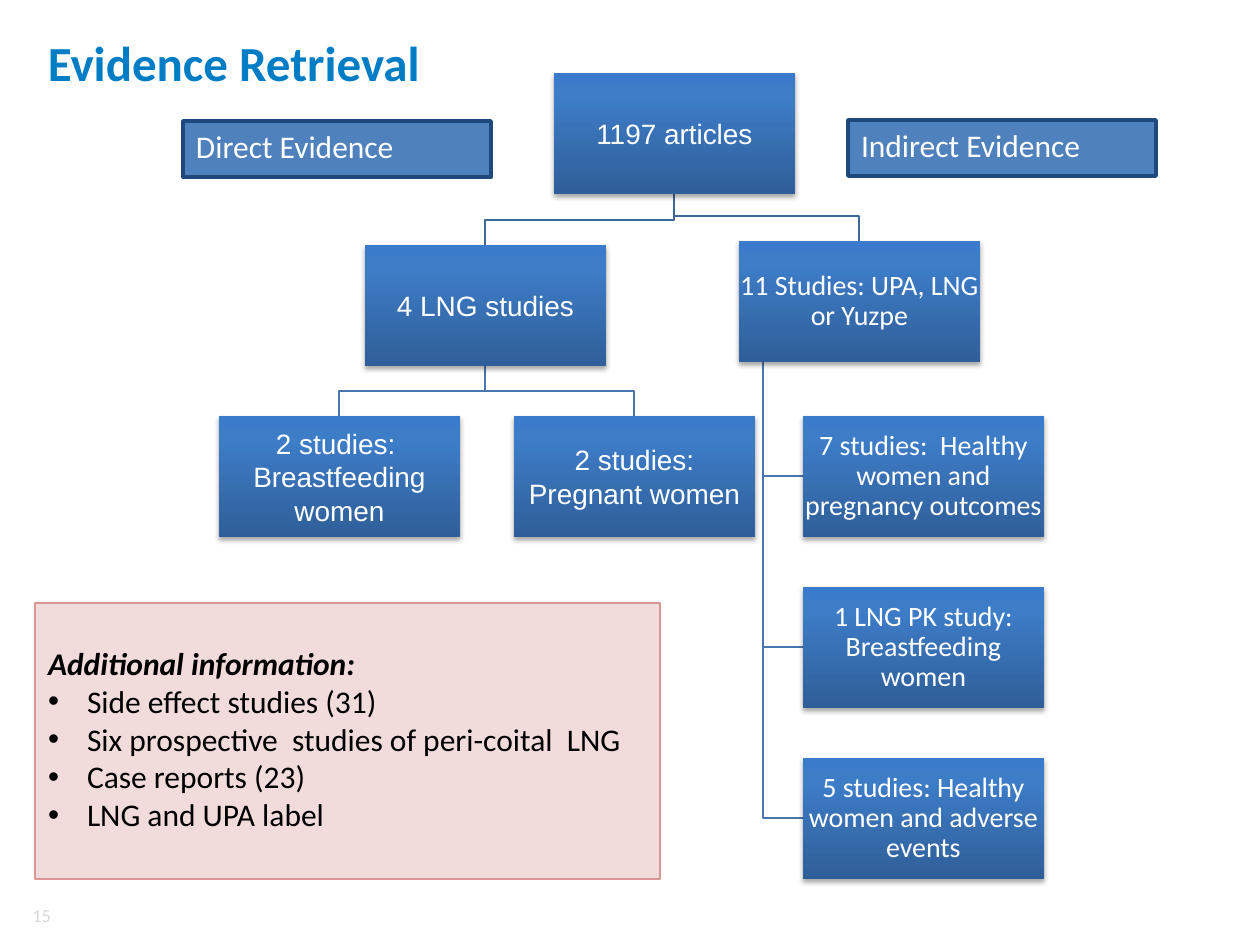
"""Build the Evidence Retrieval slide: a study tree with labels and a notes panel."""
from lxml import etree
from pptx import Presentation
from pptx.dml.color import RGBColor
from pptx.enum.shapes import MSO_SHAPE
from pptx.enum.text import MSO_ANCHOR, PP_ALIGN
from pptx.oxml.ns import qn
from pptx.util import Pt

RECT = MSO_SHAPE.RECTANGLE
TOP, MIDDLE = MSO_ANCHOR.TOP, MSO_ANCHOR.MIDDLE
LEFT, CENTER, RIGHT = PP_ALIGN.LEFT, PP_ALIGN.CENTER, PP_ALIGN.RIGHT

PX = 914400 / 126
BOX_W, BOX_H = 241, 121
ROW_TOP, ROW_GAP = 74, 171
INSET = 13, 6, 13, 6
TIGHT = 1, 1, 1, 1
INDENT = 39

WHITE = RGBColor(0xFF, 0xFF, 0xFF)
BLACK = RGBColor(0, 0, 0)
GREY = RGBColor(0xD9, 0xD9, 0xD9)
TITLE = RGBColor(0x00, 0x7D, 0xC5)
BLUE = RGBColor(0x4F, 0x81, 0xBD)
NAVY = RGBColor(0x1F, 0x49, 0x7D)
PINK = RGBColor(0xF2, 0xDC, 0xDB)
ROSE = RGBColor(0xD9, 0x96, 0x94)
DARK_LINK = RGBColor(0x3F, 0x67, 0x97)
LINK = RGBColor(0x48, 0x75, 0xAC)
SHADE = RGBColor(0x2F, 0x5F, 0x99), RGBColor(0x3D, 0x7C, 0xC7), RGBColor(0x3A, 0x7C, 0xCB)
STOPS = tuple(zip((0, 80, 100), SHADE))


def row(n):
    return ROW_TOP + n * ROW_GAP


NODES = {
    "all": ("1197 articles", 554, row(0) - 1, "Arial"),
    "direct": ("4 LNG studies", 365, row(1), "Arial"),
    "feeding": ("2 studies:  Breastfeeding women", 219, row(2), "Arial"),
    "pregnant": ("2 studies: Pregnant women", 514, row(2), "Arial"),
    "indirect": ("11 Studies: UPA, LNG or Yuzpe", 739, row(1) - 4, "Calibri"),
    "outcomes": ("7 studies:  Healthy women and pregnancy outcomes", 803, row(2), "Calibri"),
    "kinetic": ("1 LNG PK study: Breastfeeding women", 803, row(3), "Calibri"),
    "adverse": ("5 studies: Healthy women and adverse events", 803, row(4), "Calibri"),
}
FORKS = [
    ("all", ("indirect", "direct"), DARK_LINK),
    ("direct", ("pregnant", "feeding"), LINK),
]
HANGS = "indirect", ("adverse", "kinetic", "outcomes")
LABELS = [("Direct Evidence", 183, 121), ("Indirect Evidence", 848, 120)]
HEADING = "Additional information:"
NOTES = [
    "Side effect studies (31)",
    "Six prospective  studies of peri-coital  LNG",
    "Case reports (23)",
    "LNG and UPA label",
]


def emu(*px):
    return [round(n * PX) for n in px]


def frame(shape, inset=INSET, anchor=TOP):
    text = shape.text_frame
    text.word_wrap = True
    text.vertical_anchor = anchor
    (text.margin_left, text.margin_top,
     text.margin_right, text.margin_bottom) = emu(*inset)
    return text


def style(para, words, size, color, name="Calibri", align=LEFT, bold=False, italic=False):
    para.text = words
    para.alignment = align
    font = para.font
    font.size, font.name, font.color.rgb = Pt(size), name, color
    font.bold, font.italic = bold, italic


def panel(slide, place, fill, line, width):
    shape = slide.shapes.add_shape(RECT, *emu(*place))
    shape.shadow.inherit = False
    shape.fill.solid()
    shape.fill.fore_color.rgb = fill
    shape.line.color.rgb = line
    shape.line.width = Pt(width)
    return shape


def link(slide, points, color):
    pen = slide.shapes.build_freeform(*points[0], scale=PX)
    pen.add_line_segments(points[1:], close=False)
    shape = pen.convert_to_shape()
    shape.shadow.inherit = False
    shape.fill.background()
    shape.line.color.rgb = color
    shape.line.width = Pt(0.75)


def shade(shape):
    shape.fill.gradient()
    grad = shape._element.spPr.find(qn("a:gradFill"))
    stops = grad.find(qn("a:gsLst"))
    for stop in list(stops):
        stops.remove(stop)
    for pos, color in STOPS:
        stop = etree.SubElement(stops, qn("a:gs"), pos=str(pos * 1000))
        etree.SubElement(stop, qn("a:srgbClr"), val=str(color))
    grad.find(qn("a:lin")).set("ang", "16200000")


def drop(shape):
    shape.shadow.inherit = False
    effect = shape._element.spPr.find(qn("a:effectLst"))
    outer = etree.SubElement(effect, qn("a:outerShdw"), blurRad=str(Pt(3.1)),
                             dist=str(Pt(1.8)), dir="5400000", rotWithShape="0")
    color = etree.SubElement(outer, qn("a:srgbClr"), val="000000")
    etree.SubElement(color, qn("a:alpha"), val="35000")


def node(slide, words, x, y, name):
    shape = slide.shapes.add_shape(RECT, *emu(x, y, BOX_W, BOX_H))
    shade(shape)
    shape.line.fill.background()
    drop(shape)
    para = frame(shape, TIGHT, MIDDLE).paragraphs[0]
    style(para, words, 16, WHITE, name, CENTER)
    if name == "Calibri":
        para.line_spacing = 0.9


def tree(slide):
    boss, kids = HANGS
    _, x, y, _ = NODES[boss]
    trunk = x + BOX_W // 10
    for kid in kids:
        _, left, top, _ = NODES[kid]
        mid = top + BOX_H // 2
        link(slide, [(trunk, y + BOX_H), (trunk, mid), (left, mid)], LINK)
    for boss, kids, color in FORKS:
        _, x, y, _ = NODES[boss]
        start, foot = x + BOX_W // 2, y + BOX_H
        for kid in kids:
            _, left, top, _ = NODES[kid]
            end, bend = left + BOX_W // 2, top - 25
            link(slide, [(start, foot), (start, bend), (end, bend), (end, top)], color)
    for item in NODES.values():
        node(slide, *item)


def notes(slide):
    shape = panel(slide, (35, 603, 625, 276), PINK, ROSE, 0.75)
    text = frame(shape, (13, 41, 13, 6))
    style(text.paragraphs[0], HEADING, 18, BLACK, bold=True, italic=True)
    for words in NOTES:
        para = text.add_paragraph()
        props = para._p.get_or_add_pPr()
        step = round(INDENT * PX)
        props.set("marL", str(step))
        props.set("indent", str(-step))
        etree.SubElement(props, qn("a:buFont"), typeface="Arial")
        etree.SubElement(props, qn("a:buChar"), char="•")
        style(para, words, 18, BLACK)


def main():
    deck = Presentation()
    deck.slide_width, deck.slide_height = emu(1260, 945)
    slide = deck.slides.add_slide(deck.slide_layouts[6])
    number = slide.shapes.add_textbox(*emu(15, 900, 49, 30))
    style(frame(number, anchor=MIDDLE).paragraphs[0], "15", 10.5, GREY, align=RIGHT)
    tree(slide)
    title = slide.shapes.add_textbox(*emu(35, 26, 452, 72))
    style(frame(title).paragraphs[0], "Evidence Retrieval", 28, TITLE, bold=True)
    for words, x, y in LABELS:
        label = panel(slide, (x, y, 308, 56), BLUE, NAVY, 2)
        style(frame(label).paragraphs[0], words, 18, WHITE)
    notes(slide)
    deck.save("out.pptx")


if __name__ == "__main__":
    main()
